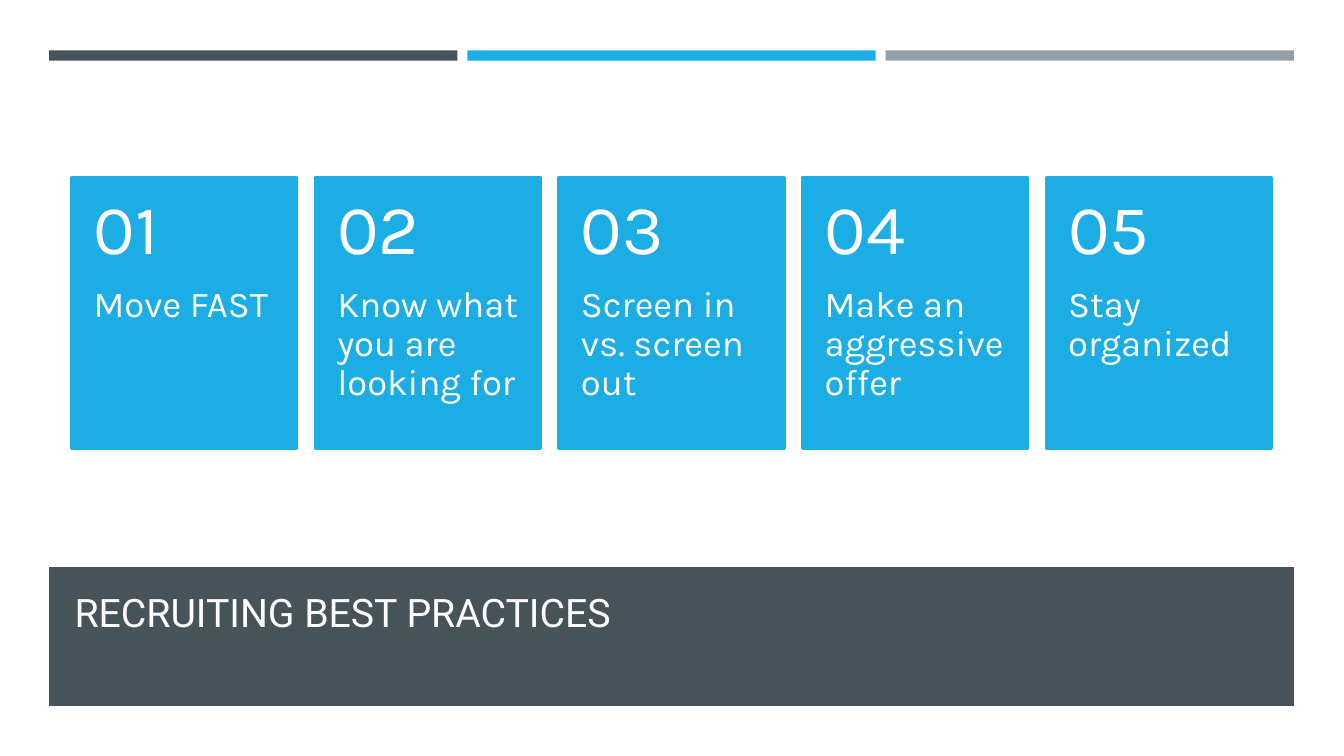
from pptx import Presentation
from pptx.dml.color import RGBColor
from pptx.enum.shapes import MSO_SHAPE
from pptx.enum.text import MSO_ANCHOR, PP_ALIGN
from pptx.util import Cm, Pt

RECTANGLE = MSO_SHAPE.RECTANGLE
TOP = MSO_ANCHOR.TOP
MIDDLE = MSO_ANCHOR.MIDDLE
LEFT = PP_ALIGN.LEFT

COLORS = {
    "slate": "465359",
    "blue": "1CADE4",
    "gray": "969FA7",
    "white": "FFFFFF",
    "title": "FFFEFF",
}

PRACTICES = [
    "Move FAST",
    "Know what you are looking for",
    "Screen in vs. screen out",
    "Make an aggressive offer",
    "Stay organized",
]

TITLE_FORMAT = {
    "font": {"name": "Roboto", "size": Pt(28)},
    "color": "title",
    "frame": {"vertical_anchor": TOP, "margin_top": Cm(0.2)},
    "paragraph": {"alignment": LEFT},
}
CARD_PARAGRAPH = {"alignment": LEFT, "line_spacing": 0.9}
NUMBER_FORMAT = {
    "font": {"name": "Karla", "size": Pt(50)},
    "color": "white",
    "frame": {
        "vertical_anchor": MIDDLE,
        "margin_left": Cm(0.56),
        "margin_right": Cm(0.56),
        "margin_top": Cm(0.46),
        "margin_bottom": Cm(0.46),
    },
    "paragraph": CARD_PARAGRAPH,
}
PRACTICE_FORMAT = {
    "font": {"name": "Karla", "size": Pt(26)},
    "color": "white",
    "frame": {
        "vertical_anchor": TOP,
        "margin_left": Cm(0.56),
        "margin_right": Cm(0.56),
        "margin_top": Cm(0),
        "margin_bottom": Cm(0.91),
    },
    "paragraph": CARD_PARAGRAPH,
}


def set_attributes(target, values):
    for name, value in values.items():
        setattr(target, name, value)


def add_rectangle(slide, left, top, width, height, color, line_width=None):
    shape = slide.shapes.add_shape(RECTANGLE, Cm(left), Cm(top), Cm(width), Cm(height))
    shape.shadow.inherit = False
    shape.fill.solid()
    shape.fill.fore_color.rgb = RGBColor.from_string(COLORS[color])
    if line_width is None:
        shape.line.fill.background()
    else:
        shape.line.color.rgb = RGBColor.from_string(COLORS[color])
        shape.line.width = Pt(line_width)


def add_text(slide, left, top, width, height, text, text_format):
    box = slide.shapes.add_textbox(Cm(left), Cm(top), Cm(width), Cm(height))
    frame = box.text_frame
    frame.word_wrap = True
    set_attributes(frame, text_format["frame"])
    paragraph = frame.paragraphs[0]
    set_attributes(paragraph, text_format["paragraph"])
    run = paragraph.add_run()
    run.text = text
    set_attributes(run.font, text_format["font"])
    run.font.color.rgb = RGBColor.from_string(COLORS[text_format["color"]])


def add_card(slide, index, practice):
    left, top, width = 1.8 + 6.14 * index, 4.47, 5.69
    number_height, practice_height = 2.73, 4.1
    add_rectangle(slide, left, top, width, number_height + practice_height, "blue", 1.75)
    add_text(slide, left, top + number_height, width, practice_height, practice, PRACTICE_FORMAT)
    add_text(slide, left, top, width, number_height, f"{index + 1:02}", NUMBER_FORMAT)


def main():
    presentation = Presentation()
    presentation.slide_width = Cm(33.87)
    presentation.slide_height = Cm(19.05)
    slide = presentation.slides.add_slide(presentation.slide_layouts[6])

    add_rectangle(slide, 1.24, 14.29, 31.37, 3.5, "slate")
    add_text(slide, 1.63, 14.63, 30.23, 2.67, "RECRUITING BEST PRACTICES", TITLE_FORMAT)
    for index, color in enumerate(["slate", "blue", "gray"]):
        add_rectangle(slide, 1.24 + 10.54 * index, 1.27, 10.29, 0.26, color)
    for index, practice in enumerate(PRACTICES):
        add_card(slide, index, practice)

    presentation.save("out.pptx")


if __name__ == "__main__":
    main()
